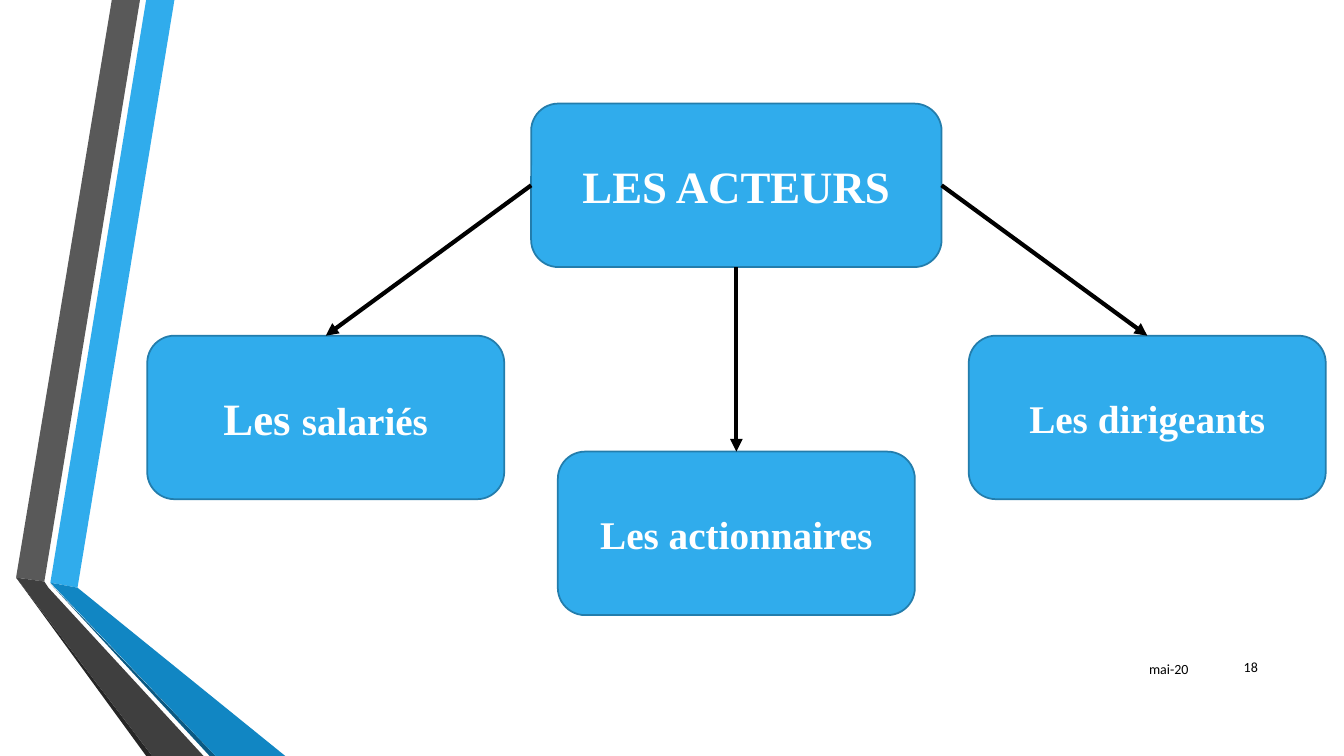
import pptx
import pptx.dml.color
import pptx.enum.shapes
import pptx.enum.text
import pptx.oxml
import pptx.oxml.ns
import pptx.util

Pt = pptx.util.Pt
ALIGN = pptx.enum.text.PP_ALIGN


def color(value):
    return pptx.dml.color.RGBColor.from_string(value)


def write(shape, runs, font_name, font_color, alignment, bold):
    frame = shape.text_frame
    frame.word_wrap = True
    frame.vertical_anchor = pptx.enum.text.MSO_ANCHOR.MIDDLE
    paragraph = frame.paragraphs[0]
    paragraph.alignment = alignment
    for text, size in runs:
        run = paragraph.add_run()
        run.text = text
        run.font.name = font_name
        run.font.size = Pt(size)
        run.font.bold = bold
        run.font.color.rgb = color(font_color)


presentation = pptx.Presentation()
presentation.slide_width = Pt(960)
presentation.slide_height = Pt(540)
slide = presentation.slides.add_slide(presentation.slide_layouts[6])

ribbons = [
    ("30ACEC", [(36, 416.2), (55.4, 419.8), (124.6, 0), (104.4, 0)]),
    ("595959", [(100, 0), (79.9, 0), (11.5, 412.6), (31.7, 415.4)]),
    ("262626", [(11.5, 412.6), (104.4, 540), (108.7, 540)]),
    ("0B5982", [(36, 416.9), (149.8, 540), (154.1, 540)]),
    ("1186C3", [(36, 416.2), (154.1, 540), (203.8, 540), (55.4, 419.8)]),
    ("3F3F3F", [(145.4, 540), (34.6, 419.8), (31.7, 415.4), (11.5, 412.6), (108.7, 540)]),
]
for fill, points in ribbons:
    corners = [(Pt(x), Pt(y)) for x, y in points]
    builder = slide.shapes.build_freeform(*corners[0])
    builder.add_line_segments(corners[1:], close=True)
    ribbon = builder.convert_to_shape()
    ribbon.shadow.inherit = False
    ribbon.fill.solid()
    ribbon.fill.fore_color.rgb = color(fill)
    ribbon.line.fill.background()

for text, left, top, width in [("mai-20", 766, 463, 90), ("18", 862.5, 462, 43)]:
    footer = slide.shapes.add_textbox(Pt(left), Pt(top), Pt(width), Pt(29))
    write(footer, [(text, 10)], "Calibri", "000000", ALIGN.RIGHT, False)

boxes = []
for left, top, width, runs in [
    (379.4, 74, 293.2, [("LES ACTEURS", 32)]),
    (692, 239.8, 255, [("Les dirigeants", 28)]),
    (398.5, 322.6, 255, [("Les actionnaires", 28)]),
    (105.2, 239.8, 255, [("Les ", 32), ("salariés", 28)]),
]:
    box = slide.shapes.add_shape(
        pptx.enum.shapes.MSO_SHAPE.ROUNDED_RECTANGLE, Pt(left), Pt(top), Pt(width), Pt(116.8))
    box.shadow.inherit = False
    box.fill.solid()
    box.fill.fore_color.rgb = color("30ACEC")
    box.line.color.rgb = color("237DAC")
    box.line.width = Pt(1.25)
    write(box, runs, "Times New Roman", "FFFFFF", ALIGN.CENTER, True)
    boxes.append(box)

actors, managers, shareholders, employees = boxes
TOP, LEFT, BOTTOM, RIGHT = range(4)
for target, side in [(shareholders, BOTTOM), (employees, LEFT), (managers, RIGHT)]:
    arrow = slide.shapes.add_connector(pptx.enum.shapes.MSO_CONNECTOR.STRAIGHT, 0, 0, 0, 0)
    arrow.begin_connect(actors, side)
    arrow.end_connect(target, TOP)
    arrow.line.color.rgb = color("000000")
    arrow.line.width = Pt(3)
    head = pptx.oxml.parse_xml(
        f'<a:tailEnd {pptx.oxml.ns.nsdecls("a")} type="triangle"/>')
    arrow.line._get_or_add_ln().append(head)
    effects = pptx.oxml.parse_xml(f'<a:effectLst {pptx.oxml.ns.nsdecls("a")}/>')
    arrow._element.spPr.append(effects)

presentation.save("out.pptx")
